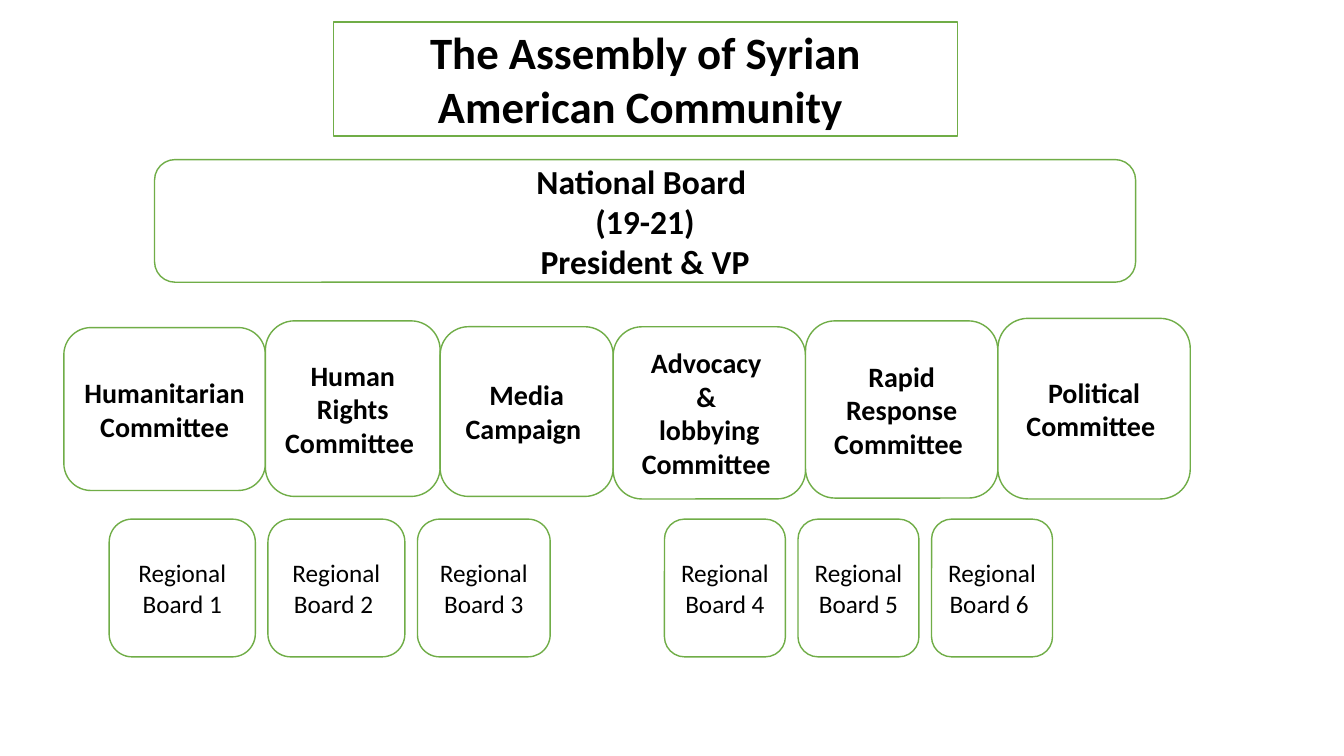
import pptx
import pptx.dml.color
import pptx.enum.shapes
import pptx.enum.text
import pptx.oxml
import pptx.oxml.ns
import pptx.util

deck = pptx.Presentation()
deck.slide_width = pptx.util.Inches(13.33)
deck.slide_height = pptx.util.Inches(7.5)
col = deck.slide_width / 160
row = deck.slide_height / 90
slide = deck.slides.add_slide(deck.slide_layouts[5])
round_box = pptx.enum.shapes.MSO_SHAPE.ROUNDED_RECTANGLE


def paint(part, color):
    part.solid()
    part.fore_color.rgb = pptx.dml.color.RGBColor.from_string(color)


def style(box, text, size, bold):
    paint(box.fill, "FFFFFF")
    paint(box.line.fill, "70AD47")
    box.line.width = pptx.util.Pt(1)
    frame = box.text_frame
    frame.word_wrap = True
    frame.auto_size = pptx.enum.text.MSO_AUTO_SIZE.NONE
    frame.vertical_anchor = pptx.enum.text.MSO_ANCHOR.MIDDLE
    for i, block in enumerate(text.split("\n")):
        para = frame.add_paragraph() if i else frame.paragraphs[0]
        para.alignment = pptx.enum.text.PP_ALIGN.CENTER
        for j, line in enumerate(block.split("|")):
            if j:
                para.add_line_break()
            run = para.add_run()
            run.text = line
            run.font.name = "Calibri"
            run.font.size = pptx.util.Pt(size)
            run.font.bold = bold
            paint(run.font.fill, "000000")


title = slide.shapes.title
title.left, title.top = int(39.7 * col), int(2.6 * row)
title.width, title.height = int(74.3 * col), int(13.6 * row)
shape = pptx.oxml.parse_xml(
    '<a:prstGeom xmlns:a="http://schemas.openxmlformats.org/drawingml/2006/main" '
    'prst="roundRect"><a:avLst/></a:prstGeom>')
title.element.spPr.find(pptx.oxml.ns.qn("a:xfrm")).addnext(shape)
style(title, "The Assembly of Syrian American Community ", 32, True)

boxes = [(18.4, 19, 116.8, 14.6, "National Board |(19-21)\nPresident & VP", 24, True)]

teams = [
    ("Humanitarian\nCommittee", 24, 39, 19.4),
    ("Human Rights Committee ", 20.8, 38.2, 20.9),
    ("Media Campaign ", 20.6, 38.9, 20.2),
    ("Advocacy |& |lobbying\nCommittee ", 22.9, 38.9, 20.5),
    ("Rapid Response Committee ", 22.9, 38.2, 21.1),
    ("Political Committee ", 22.9, 37.9, 21.5),
]
left = 7.6
for name, wide, top, high in teams:
    boxes.append((left, top, wide, high, name, 20, True))
    left += wide

count = 0
for left, widths in ((13, (17.4, 16.3, 15.8)), (79.1, (14.4, 14.4, 14.4))):
    for wide in widths:
        count += 1
        tail = " " if count in (2, 6) else ""
        boxes.append((left, 61.8, wide, 16.4, f"Regional Board {count}{tail}", 18, False))
        left += wide + 1.5

for left, top, wide, high, text, size, bold in boxes:
    box = slide.shapes.add_shape(
        round_box, int(left * col), int(top * row), int(wide * col), int(high * row))
    box.shadow.inherit = False
    style(box, text, size, bold)

deck.save("out.pptx")
